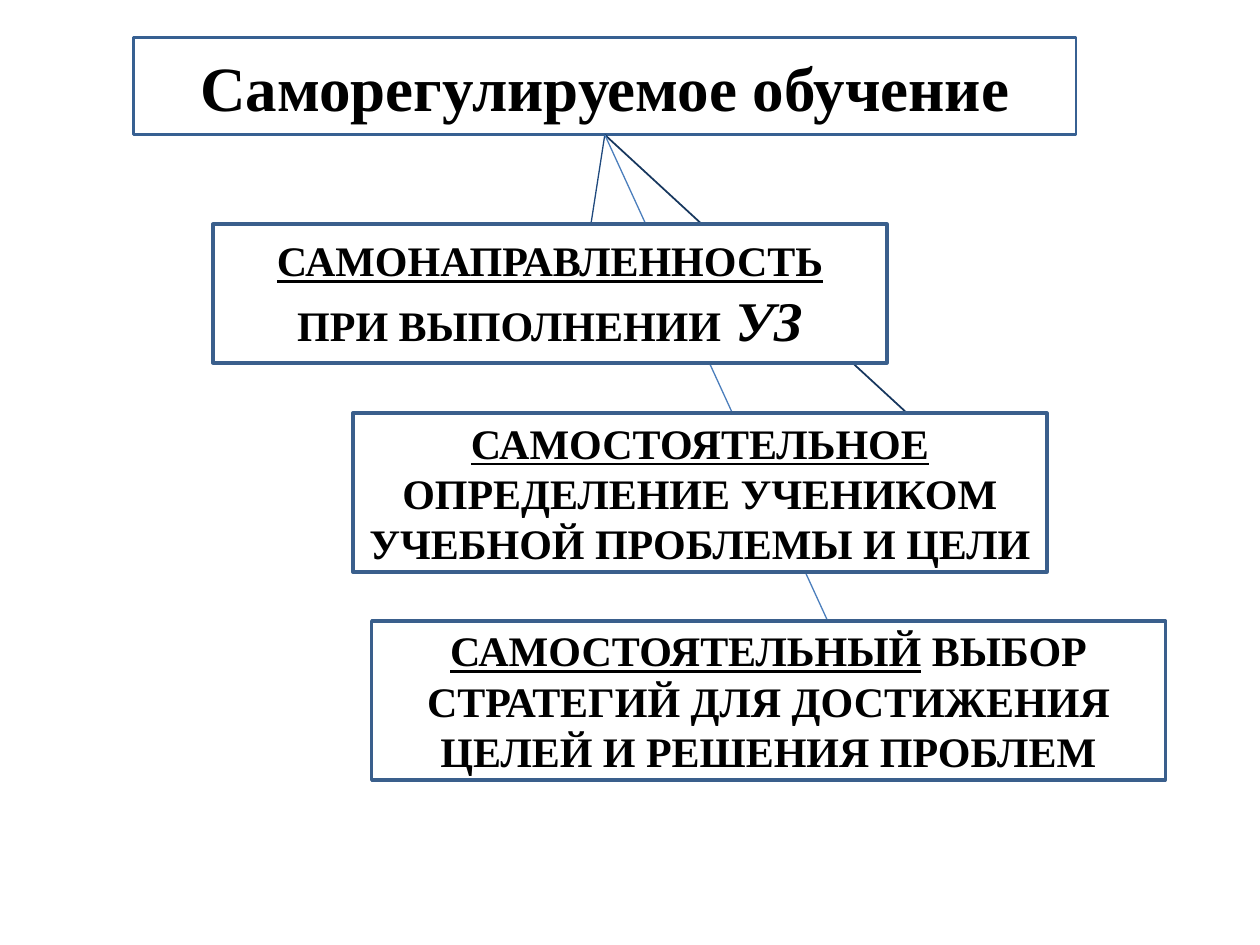
from dataclasses import dataclass

from lxml import etree
from pptx import Presentation
from pptx.dml.color import RGBColor
from pptx.enum import shapes, text
from pptx.oxml import ns
from pptx.util import Inches, Pt


@dataclass(frozen=True)
class Theme:
    font: str = "Times New Roman"
    ink: str = "000000"
    paper: str = "FFFFFF"
    frame: str = "376092"
    edge: str = "3A5F8C"
    blue: str = "4B7EBC"
    navy: str = "17375E"
    steel: str = "1F497D"
    head: int = 36
    large: int = 32
    body: int = 24


THEME = Theme()
TITLE = (1.06, 0.3, 7.48, 0.77)

# Each box: place, then paragraphs of (words, size, underline, italic)
BOXES = [
    ((1.69, 1.78, 5.35, 1.1), [
        [("САМОНАПРАВЛЕННОСТЬ", THEME.body, True, False)],
        [("ПРИ ВЫПОЛНЕНИИ", THEME.body, False, False),
         (" ", THEME.large, False, False),
         ("УЗ", THEME.large, False, True)],
    ]),
    ((2.8, 3.28, 5.51, 1.26), [
        [("САМОСТОЯТЕЛЬНОЕ ", THEME.body, True, False),
         ("ОПРЕДЕЛЕНИЕ УЧЕНИКОМ УЧЕБНОЙ ПРОБЛЕМЫ И ЦЕЛИ",
          THEME.body, False, False)],
    ]),
    ((2.95, 4.93, 6.3, 1.26), [
        [("САМОСТОЯТЕЛЬНЫЙ", THEME.body, True, False),
         (" ВЫБОР СТРАТЕГИЙ ДЛЯ ДОСТИЖЕНИЯ ЦЕЛЕЙ И РЕШЕНИЯ ПРОБЛЕМ",
          THEME.body, False, False)],
    ]),
]

# Where each link meets the top of its box: x, colour, width
LINKS = [(4.69, THEME.steel, 0.75), (7.2, THEME.navy, 1),
         (6.57, THEME.blue, 0.75)]


def set_line(item, color, width):
    item.line.color.rgb = RGBColor.from_string(color)
    item.line.width = Pt(width)


def add_run(para, words, size, under=False, slant=False):
    run = para.add_run()
    run.text = words
    font = run.font
    font.name, font.size, font.bold = THEME.font, Pt(size), True
    font.underline, font.italic = under, slant
    font.color.rgb = RGBColor.from_string(THEME.ink)


def fill_text(frame, paras):
    frame.word_wrap = True
    frame.auto_size = text.MSO_AUTO_SIZE.NONE
    frame.vertical_anchor = text.MSO_ANCHOR.MIDDLE
    for i, runs in enumerate(paras):
        para = frame.add_paragraph() if i else frame.paragraphs[0]
        para.alignment = text.PP_ALIGN.CENTER
        for run in runs:
            add_run(para, *run)


def set_title(slide):
    title = slide.shapes.title
    title.left, title.top, title.width, title.height = map(Inches, TITLE)
    set_line(title, THEME.frame, 1.5)
    fill_text(title.text_frame, [[("Саморегулируемое обучение", THEME.head)]])


def add_link(slide, start, end, color, width):
    link = slide.shapes.add_connector(
        shapes.MSO_CONNECTOR.STRAIGHT, *map(Inches, start + end))
    set_line(link, color, width)
    etree.SubElement(link._element.spPr, ns.qn("a:effectLst"))


def add_box(slide, place, paras):
    box = slide.shapes.add_shape(
        shapes.MSO_SHAPE.RECTANGLE, *map(Inches, place))
    box.shadow.inherit = False
    box.fill.solid()
    box.fill.fore_color.rgb = RGBColor.from_string(THEME.paper)
    set_line(box, THEME.edge, 2)
    fill_text(box.text_frame, paras)


def main():
    deck = Presentation()
    deck.slide_width, deck.slide_height = Inches(10), Inches(7.5)
    slide = deck.slides.add_slide(deck.slide_layouts[5])
    set_title(slide)

    # Links fan out from the title and run behind the boxes
    left, top, width, height = TITLE
    start = (left + width / 2, top + height)
    for (place, _), (x, color, weight) in zip(BOXES, LINKS):
        add_link(slide, start, (x, place[1]), color, weight)

    # Boxes step down the slide
    for place, paras in BOXES:
        add_box(slide, place, paras)

    deck.save("out.pptx")


if __name__ == "__main__":
    main()
